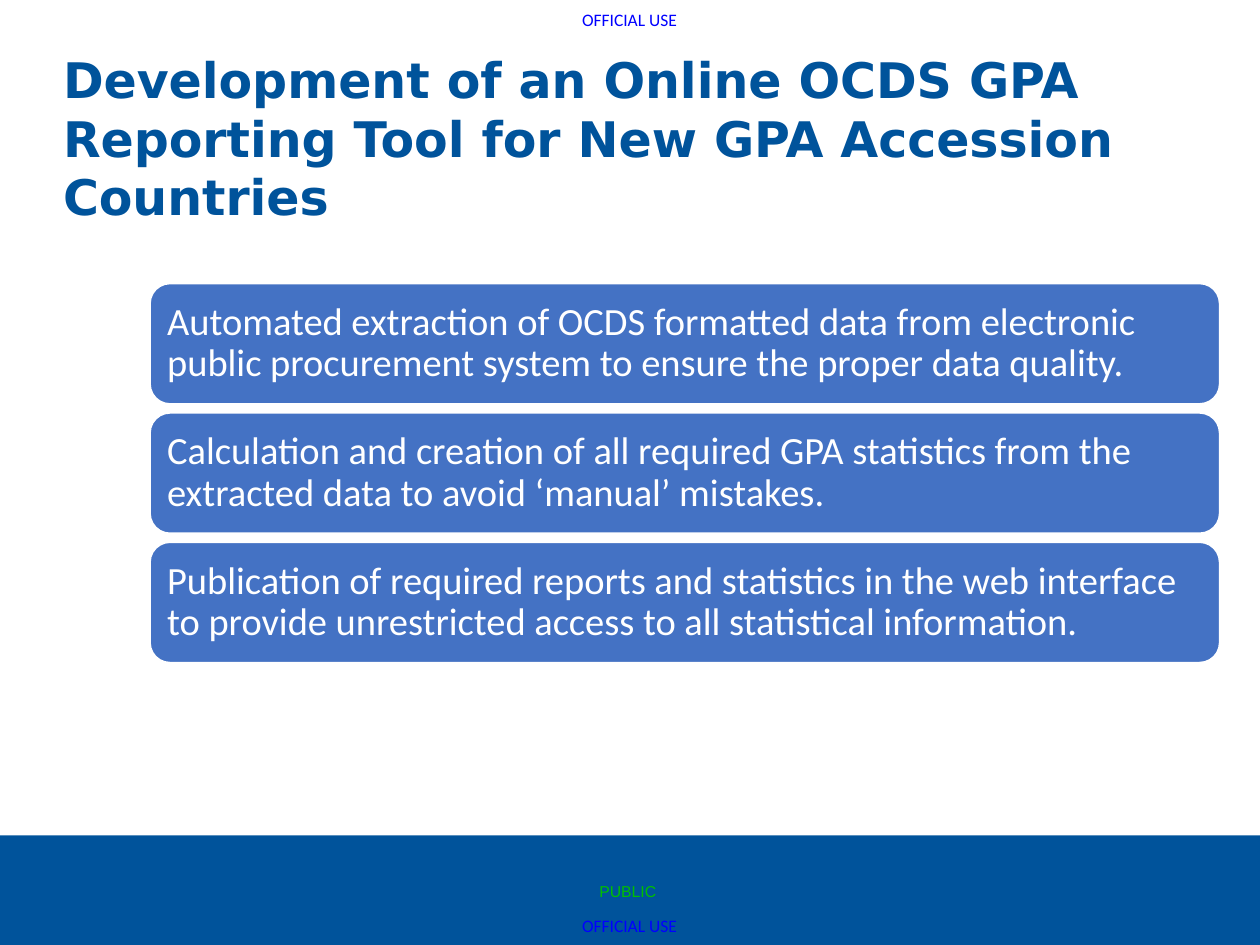
from dataclasses import dataclass

from pptx import Presentation
from pptx.dml.color import RGBColor as RGB
from pptx.enum.shapes import MSO_SHAPE as Shape
from pptx.enum.text import MSO_ANCHOR as Anchor, MSO_AUTO_SIZE as AutoSize, PP_ALIGN as Align
from pptx.util import Inches, Pt


@dataclass(frozen=True)
class Theme:
    """Colours, fonts and type sizes of the deck."""
    navy: RGB = RGB(0x00, 0x53, 0x9B)
    card: RGB = RGB(0x44, 0x72, 0xC4)
    white: RGB = RGB(0xFF, 0xFF, 0xFF)
    official: RGB = RGB(0x00, 0x00, 0xFF)
    public: RGB = RGB(0x00, 0xC0, 0x00)
    title_font: str = "DejaVu Sans"
    body_font: str = "Calibri"
    public_font: str = "Arial"
    title_size: Pt = Pt(28)
    card_size: Pt = Pt(22)
    label_size: Pt = Pt(10)
    public_size: Pt = Pt(9)


T = Theme()
TITLE = "Development of an Online OCDS GPA Reporting Tool for New GPA Accession Countries"
BENEFITS = [
    "Automated extraction of OCDS formatted data from electronic public procurement system "
    "to ensure the proper data quality.",
    "Calculation and creation of all required GPA statistics from the extracted data "
    "to avoid ‘manual’ mistakes.",
    "Publication of required reports and statistics in the web interface "
    "to provide unrestricted access to all statistical information.",
]


def write(tf, text, font, size, color, align=Align.LEFT, bold=False):
    """Write one styled paragraph into a text frame and return it."""
    p = tf.paragraphs[0]
    p.text = text
    p.alignment = align
    p.font.name, p.font.size, p.font.bold = font, size, bold
    p.font.color.rgb = color
    return p


def set_insets(tf, inset):
    """Give a text frame the same inset on all sides."""
    tf.margin_left = tf.margin_top = tf.margin_right = tf.margin_bottom = inset


def add_panel(s, kind, box, fill):
    """Add a filled shape without shadow or outline."""
    sp = s.shapes.add_shape(kind, *box)
    sp.shadow.inherit = False
    sp.fill.solid()
    sp.fill.fore_color.rgb = fill
    sp.line.fill.background()
    return sp


def add_title(s, box):
    """Place and format the title placeholder."""
    sp = s.shapes.title
    sp.left, sp.top, sp.width, sp.height = box
    tf = sp.text_frame
    tf.word_wrap = True
    tf.auto_size = AutoSize.SHAPE_TO_FIT_TEXT
    tf.vertical_anchor = Anchor.TOP
    write(tf, TITLE, T.title_font, T.title_size, T.navy, bold=True)


def add_official_label(s, box):
    """Add a classification label that fits its text."""
    tf = s.shapes.add_textbox(*box).text_frame
    set_insets(tf, 0)
    tf.word_wrap = False
    tf.auto_size = AutoSize.SHAPE_TO_FIT_TEXT
    write(tf, "OFFICIAL USE", T.body_font, T.label_size, T.official)


def add_public_label(s, box):
    """Add the centred public marking."""
    tf = s.shapes.add_textbox(*box).text_frame
    tf.word_wrap = True
    write(tf, "PUBLIC ", T.public_font, T.public_size, T.public, Align.CENTER)


def add_cards(s, box, texts, gap):
    """Stack equal rounded cards, one for each text, in the box."""
    left, top, width, height = box
    card_height = int((height - gap * (len(texts) - 1)) / len(texts))
    for i, text in enumerate(texts):
        place = left, top + i * (card_height + gap), width, card_height
        sp = add_panel(s, Shape.ROUNDED_RECTANGLE, place, T.card)
        sp.line.color.rgb = T.white
        sp.line.width = Pt(1)
        tf = sp.text_frame
        tf.word_wrap = True
        tf.vertical_anchor = Anchor.MIDDLE
        set_insets(tf, Inches(0.09))
        p = write(tf, text, T.body_font, T.card_size, T.white)
        p.line_spacing = 0.9


def main():
    """Build the slide and save it."""
    prs = Presentation()
    prs.slide_width, prs.slide_height = Inches(10), Inches(7.5)
    s = prs.slides.add_slide(prs.slide_layouts[5])
    add_panel(s, Shape.RECTANGLE, (0, Inches(6.63), Inches(10), Inches(0.87)), T.navy)
    for top in (0.07, 7.26):
        add_official_label(s, (Inches(4.62), Inches(top), Inches(0.79), Inches(0.17)))
    add_title(s, (Inches(0.4), Inches(0.34), Inches(9.27), Inches(1.51)))
    add_public_label(s, (0, Inches(6.95), Inches(10), Inches(0.4)))
    add_cards(s, (Inches(1.19), Inches(2.25), Inches(8.49), Inches(3.01)), BENEFITS, Inches(0.07))
    prs.save("out.pptx")


if __name__ == "__main__":
    main()
